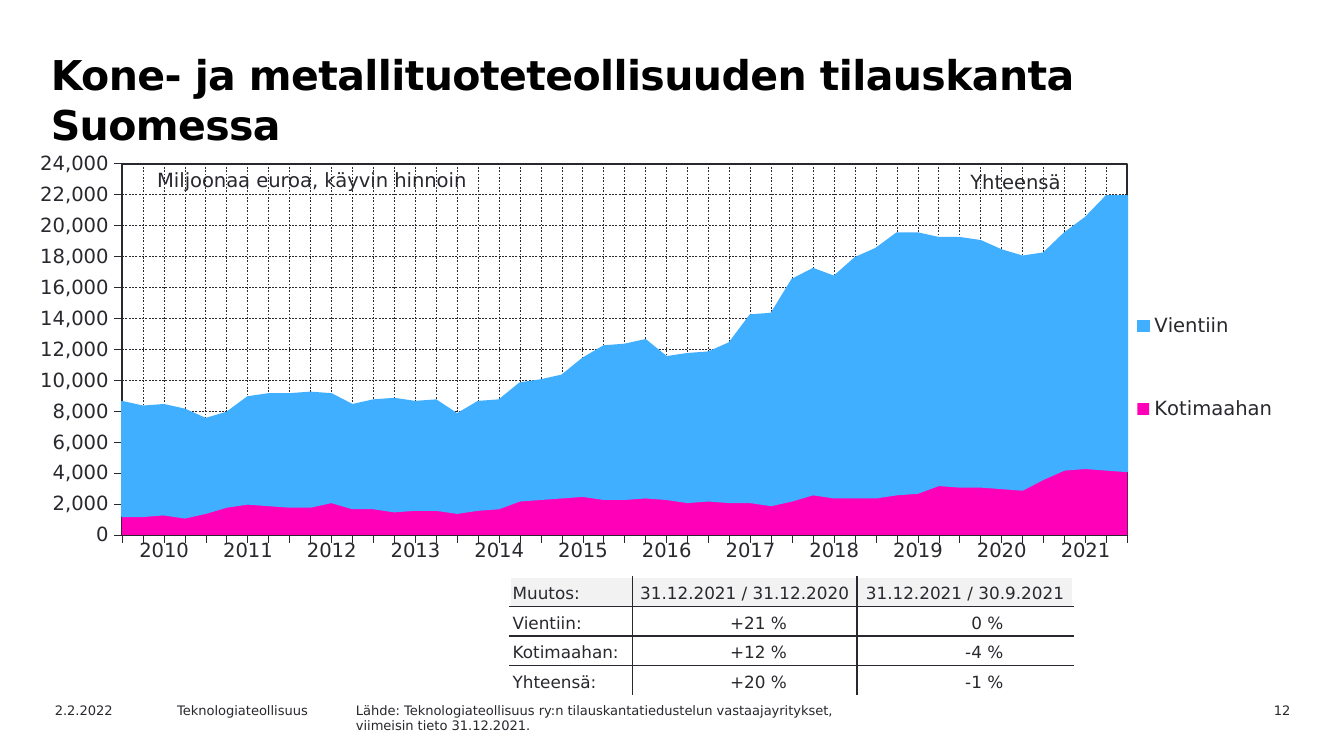
from lxml.etree import SubElement
from pptx import Presentation
from pptx.chart.data import CategoryChartData
from pptx.dml.color import RGBColor
from pptx.enum.chart import XL_CHART_TYPE, XL_LEGEND_POSITION, XL_TICK_LABEL_POSITION, XL_TICK_MARK
from pptx.enum.dml import MSO_LINE
from pptx.enum.text import MSO_ANCHOR, PP_ALIGN
from pptx.oxml import parse_xml
from pptx.oxml.ns import nsdecls, qn
from pptx.util import Inches, Pt

INK = RGBColor(0x29, 0x28, 0x2E)
BLACK = RGBColor(0x00, 0x00, 0x00)
WHITE = RGBColor(0xFF, 0xFF, 0xFF)
HEADER_GREY = RGBColor(0xF2, 0xF2, 0xF2)
PINK = RGBColor(0xFF, 0x00, 0xB8)
BLUE = RGBColor(0x40, 0xAF, 0xFF)
FONT = "DejaVu Sans"
NO_TABLE_STYLE = "{2D5ABB26-0587-4C30-8999-92F81FD0307C}"

prs = Presentation()
prs.slide_width = Inches(10)
prs.slide_height = prs.slide_width * 9 // 16
slide = prs.slides.add_slide(prs.slide_layouts[6])


def area(left, top, width, height):
    """Turn percentages of the slide into a position and size."""
    w, h = prs.slide_width / 100, prs.slide_height / 100
    return int(left * w), int(top * h), int(width * w), int(height * h)


def write(paragraph, text, size, color=INK, align=PP_ALIGN.LEFT):
    paragraph.alignment = align
    run = paragraph.add_run()
    run.text = text
    run.font.size, run.font.name = Pt(size), FONT
    run.font.color.rgb = color
    return run


# Title
title = slide.shapes.add_textbox(*area(2.8, 5.5, 87.4, 12.6)).text_frame
title.word_wrap = True
heading = title.paragraphs[0]
heading_run = write(heading, "Kone- ja metallituoteteollisuuden tilauskanta Suomessa", 22, BLACK)
heading_run.font.bold = True
heading_run.font._element.set("spc", "-30")
heading.line_spacing = Pt(27)

# Footer
footer = [
    (87.6, 9.4, 3.2, PP_ALIGN.RIGHT, ["12"]),
    (3.1, 10, 3.2, PP_ALIGN.LEFT, ["2.2.2022"]),
    (12.2, 14.2, 3.2, PP_ALIGN.LEFT, ["Teknologiateollisuus"]),
    (25.5, 50, 4.6, PP_ALIGN.LEFT, [
        "Lähde: Teknologiateollisuus ry:n tilauskantatiedustelun vastaajayritykset,",
        "viimeisin tieto 31.12.2021."]),
]
for left, width, height, align, lines in footer:
    note = slide.shapes.add_textbox(*area(left, 92, width, height)).text_frame
    note.word_wrap = True
    for i, line in enumerate(lines):
        write(note.add_paragraph() if i else note.paragraphs[0], line, 7, align=align)

# Order book by quarter, million euros; the last quarters carry no label
domestic = [
    1200, 1200, 1300, 1100, 1400, 1800, 2000, 1900, 1800, 1800, 2100, 1700, 1700,
    1500, 1600, 1600, 1400, 1600, 1700, 2200, 2300, 2400, 2500, 2300, 2300, 2400,
    2300, 2100, 2200, 2100, 2100, 1900, 2200, 2600, 2400, 2400, 2400, 2600, 2700,
    3200, 3100, 3100, 3000, 2900, 3600, 4200, 4300, 4200, 4100]
export = [
    7400, 7100, 7100, 7000, 6100, 6100, 6900, 7200, 7300, 7400, 7000, 6700, 7000,
    7300, 7000, 7100, 6400, 7000, 7000, 7600, 7700, 7900, 8900, 9900, 10000, 10200,
    9200, 9600, 9600, 10300, 12100, 12400, 14300, 14600, 14300, 15500, 16100, 16900,
    16800, 16000, 16100, 15900, 15400, 15100, 14600, 15300, 16200, 17700, 17800]
orders = CategoryChartData()
orders.categories = [str(n) for n in range(1, 47)]
orders.add_series("Kotimaahan ", domestic)
orders.add_series("Vientiin ", export)
chart = slide.shapes.add_chart(
    XL_CHART_TYPE.AREA_STACKED, *area(2, 19.75, 96.9, 55.5), orders).chart
chart.has_title = False
chart.font.size, chart.font.name = Pt(10.5), FONT
chart.font.color.rgb = INK
for series, color in zip(chart.plots[0].series, (PINK, BLUE)):
    series.format.fill.solid()
    series.format.fill.fore_color.rgb = color
series.format.line.color.rgb = BLUE
series.format.line.width = Pt(0.88)

quarters, euros = chart.category_axis, chart.value_axis
for axis in (quarters, euros):
    axis.major_tick_mark, axis.minor_tick_mark = XL_TICK_MARK.OUTSIDE, XL_TICK_MARK.NONE
    axis.has_major_gridlines = True
    axis.format.line.color.rgb = INK
    axis.format.line.width = Pt(0.22)
    grid = axis.major_gridlines.format.line
    grid.color.rgb, grid.width, grid.dash_style = INK, Pt(0.25), MSO_LINE.DASH
quarters.tick_label_position = XL_TICK_LABEL_POSITION.NONE
euros.minimum_scale, euros.maximum_scale, euros.major_unit = 0, 24000, 2000
euros.tick_labels.number_format = "#,##0"
euros.tick_labels.number_format_is_linked = False
euros._element.find(qn("c:crossBetween")).set("val", "midCat")

chart.has_legend = True
chart.legend.position = XL_LEGEND_POSITION.RIGHT
chart.legend.include_in_layout = False
chart.legend.font.size, chart.legend.font.name = Pt(10.5), FONT
chart.legend.font.color.rgb = INK

# Fixed places for plot and legend, in percent of the chart, and a frame round the plot
plot_area = chart._chartSpace.chart.plotArea
for part, index, target, box in (
        (plot_area, 0, '<c:layoutTarget val="inner"/>', (7.3, 3.4, 77.2, 88.5)),
        (chart.legend._element, 1, "", (83.7, 25, 14, 54))):
    for old in part.findall(qn("c:layout")):
        part.remove(old)
    sizes = "".join(f'<c:{tag} val="{v / 100:.3f}"/>' for tag, v in zip("xywh", box))
    part.insert(index, parse_xml(
        f'<c:layout {nsdecls("c")}><c:manualLayout>{target}<c:xMode val="edge"/>'
        f'<c:yMode val="edge"/>{sizes}</c:manualLayout></c:layout>'))
plot_area.append(parse_xml(
    f'<c:spPr {nsdecls("c", "a")}><a:noFill/><a:ln w="{Pt(1)}"><a:solidFill>'
    f'<a:srgbClr val="{INK}"/></a:solidFill></a:ln></c:spPr>'))

# Chart captions
for text, box, wrap in (
        ("Miljoonaa euroa, käyvin hinnoin", (10.8, 21.3, 26, 4.8), False),
        ("Yhteensä", (71.3, 21.6, 10.6, 4.8), True)):
    caption = slide.shapes.add_textbox(*area(*box)).text_frame
    caption.word_wrap = wrap
    caption.margin_left = caption.margin_right = Inches(0.09)
    caption.margin_top = caption.margin_bottom = Inches(0.05)
    write(caption.paragraphs[0], text, 10.5)

# Change table: dark inner rules, white outer edge
changes = [
    ["Muutos:", "31.12.2021 / 31.12.2020", "31.12.2021 / 30.9.2021"],
    ["Vientiin:", "+21 %", "0 %"],
    ["Kotimaahan:", "+12 %", "-4 %"],
    ["Yhteensä:", "+20 %", "-1 %"],
]
change_table = slide.shapes.add_table(4, 3, *area(37.95, 76.3, 41.9, 15.7)).table
year_table = slide.shapes.add_table(1, 12, *area(9.1, 70.45, 74.8, 5.5)).table
for table in (change_table, year_table):
    table.first_row = table.horz_banding = False
    table._tbl.tblPr[0].text = NO_TABLE_STYLE
for column, width in zip(change_table.columns, (9.1, 16.7, 16.1)):
    column.width = area(0, 0, width, 0)[2]

for r, row in enumerate(changes):
    for c, text in enumerate(row):
        cell = change_table.cell(r, c)
        cell.vertical_anchor = MSO_ANCHOR.BOTTOM
        cell.margin_left = cell.margin_right = cell.margin_top = cell.margin_bottom = Inches(0.02)
        align = PP_ALIGN.CENTER if c and r == 0 else PP_ALIGN.RIGHT if c else PP_ALIGN.LEFT
        if align == PP_ALIGN.RIGHT:
            cell.margin_right = Inches(0.52)
        write(cell.text_frame.paragraphs[0], text, 9, align=align)
        for side, outer in (("L", c == 0), ("R", c == 2), ("T", r == 0), ("B", r == 3)):
            edge = SubElement(cell._tc.get_or_add_tcPr(), qn(f"a:ln{side}"), w=str(Pt(1)))
            fill = SubElement(edge, qn("a:solidFill"))
            SubElement(fill, qn("a:srgbClr"), val=str(WHITE if outer else INK))
        if r in (0, 3):
            cell.fill.solid()
            cell.fill.fore_color.rgb = WHITE if r else HEADER_GREY
        else:
            cell.fill.background()

# Year labels under the chart
for c, cell in enumerate(year_table.rows[0].cells):
    cell.fill.background()
    write(cell.text_frame.paragraphs[0], str(2010 + c), 10.5, align=PP_ALIGN.CENTER)

prs.save("out.pptx")
